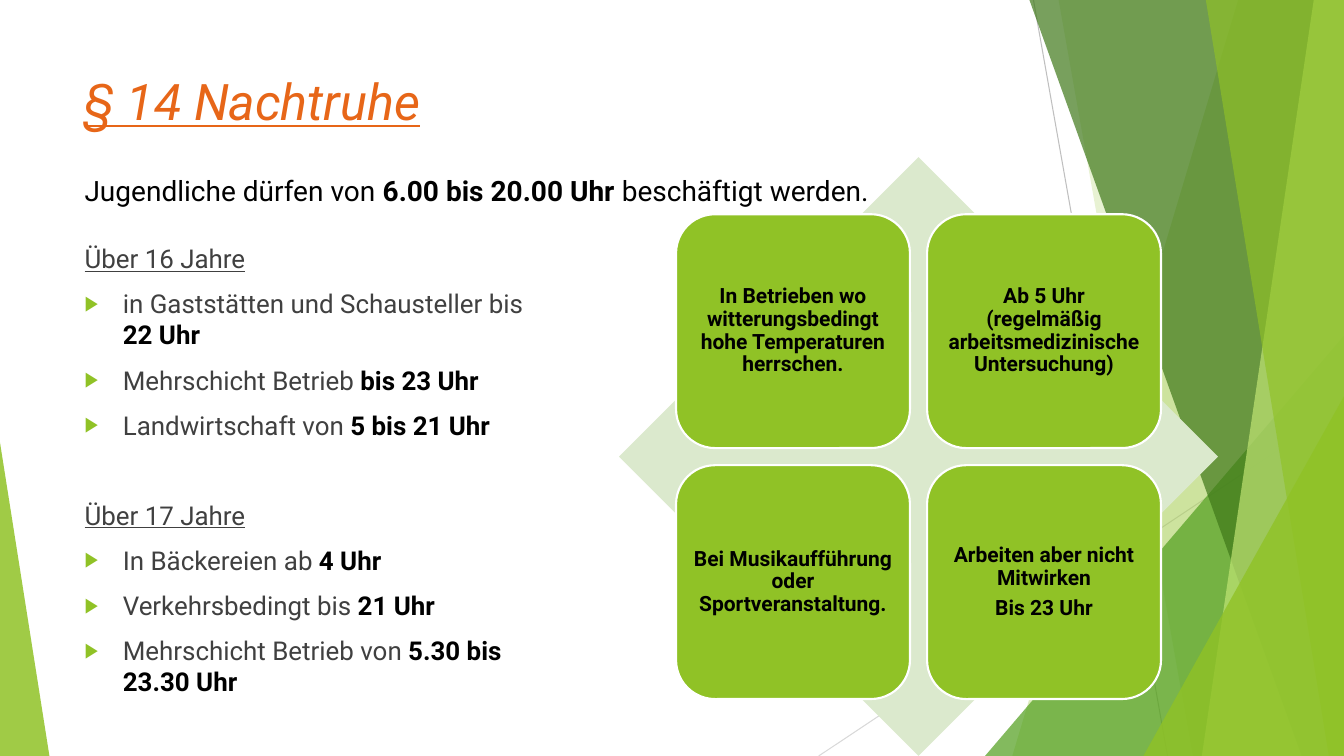
from lxml import etree
from pptx import Presentation
from pptx.dml.color import RGBColor
from pptx.enum.shapes import MSO_CONNECTOR, MSO_SHAPE
from pptx.enum.text import MSO_ANCHOR, PP_ALIGN
from pptx.oxml.ns import qn
from pptx.util import Inches, Pt

STRAIGHT = MSO_CONNECTOR.STRAIGHT
TRIANGLE, DIAMOND, TILE = MSO_SHAPE.RIGHT_TRIANGLE, MSO_SHAPE.DIAMOND, MSO_SHAPE.ROUNDED_RECTANGLE
PEAK = MSO_SHAPE.ISOSCELES_TRIANGLE
LEFT, CENTER = PP_ALIGN.LEFT, PP_ALIGN.CENTER
MIDDLE = MSO_ANCHOR.MIDDLE

WIDTH, HEIGHT = 13.33, 7.5
FONT = "Roboto"
GREEN, BLACK, GREY, WHITE = "90C226", "000000", "404040", "FFFFFF"

AGE_GROUPS = [
    ("Über 16 Jahre", [
        ("in Gaststätten und Schausteller bis ", "22 Uhr"),
        ("Mehrschicht Betrieb ", "bis 23 Uhr"),
        ("Landwirtschaft von ", "5 bis 21 Uhr"),
    ]),
    ("Über 17 Jahre", [
        ("In Bäckereien ab ", "4 Uhr"),
        ("Verkehrsbedingt bis ", "21 Uhr"),
        ("Mehrschicht Betrieb von ", "5.30 bis 23.30 Uhr"),
    ]),
]
EXCEPTIONS = [
    ["In Betrieben wo witterungsbedingt hohe Temperaturen herrschen."],
    ["Ab 5 Uhr\n(regelmäßig arbeitsmedizinische Untersuchung)"],
    ["Bei Musikaufführung oder Sportveranstaltung."],
    ["Arbeiten aber nicht Mitwirken", "Bis 23 Uhr"],
]


def rgb(color):
    return RGBColor.from_string(color)


def paint(shape, color, opacity=100, outline=None):
    shape.shadow.inherit = False
    shape.fill.solid()
    shape.fill.fore_color.rgb = rgb(color)
    if opacity < 100:
        fill_color = shape.fill._xPr.find(qn("a:solidFill"))[0]
        etree.SubElement(fill_color, qn("a:alpha"), val=str(opacity * 1000))
    if outline:
        shape.line.color.rgb = rgb(outline)
        shape.line.width = Pt(1.5)
    else:
        shape.line.fill.background()


def add_preset(slide, preset, box, color, **look):
    shape = slide.shapes.add_shape(preset, *map(Inches, box))
    paint(shape, color, **look)
    return shape


def add_frame(slide, box):
    frame = slide.shapes.add_textbox(*map(Inches, box)).text_frame
    frame.word_wrap = True
    return frame


def next_paragraph(frame):
    first = frame.paragraphs[0]
    return frame.add_paragraph() if first.runs else first


def write(paragraph, text, size, color=BLACK, bold=False, italic=False, underline=False):
    """Append text to a paragraph; a newline becomes a line break."""
    for index, line in enumerate(text.split("\n")):
        if index:
            paragraph.add_line_break()
        run = paragraph.add_run()
        run.text = line
        font = run.font
        font.name, font.size = FONT, Pt(size)
        font.bold, font.italic, font.underline = bold, italic, underline
        font.color.rgb = rgb(color)


def add_bullet(paragraph, indent):
    properties = paragraph._p.get_or_add_pPr()
    properties.set("marL", str(Inches(indent)))
    properties.set("indent", str(-Inches(indent)))
    bullet_color = etree.SubElement(properties, qn("a:buClr"))
    etree.SubElement(bullet_color, qn("a:srgbClr"), val=GREEN)
    etree.SubElement(properties, qn("a:buSzPct"), val="80000")
    etree.SubElement(properties, qn("a:buFont"), typeface="Arial")
    etree.SubElement(properties, qn("a:buChar"), char="▶")


def draw_hairline(slide, start, end, color):
    line = slide.shapes.add_connector(STRAIGHT, *map(Inches, start + end))
    line.line.color.rgb = rgb(color)
    line.line.width = Pt(0.75)
    etree.SubElement(line._element.spPr, qn("a:effectLst"))


def draw_facet(slide, top_x, bottom_x, color, opacity):
    """Fill from a slanted edge to the right side of the slide."""
    corners = [(top_x, 0), (WIDTH, 0), (WIDTH, HEIGHT), (bottom_x, HEIGHT)]
    points = [(Inches(x), Inches(y)) for x, y in corners]
    builder = slide.shapes.build_freeform(*points[0], scale=1.0)
    builder.add_line_segments(points[1:], close=True)
    paint(builder.convert_to_shape(), color, opacity)


def draw_corner(slide, left, top, color, opacity):
    """Triangle standing in the lower right corner of the slide."""
    box = (left, top, WIDTH - left, HEIGHT - top)
    add_preset(slide, PEAK, box, color, opacity=opacity).adjustments[0] = 1


def draw_backdrop(slide):
    draw_hairline(slide, (10.25, 0), (11.58, HEIGHT), "BFBFBF")
    draw_hairline(slide, (WIDTH, 4.03), (8.12, HEIGHT), "D9D9D9")
    draw_facet(slide, 12.28, 10.04, GREEN, 30)
    draw_facet(slide, 10.5, 11.83, GREEN, 20)
    draw_corner(slide, 9.77, 3.33, "54A021", 72)
    draw_facet(slide, 10.21, 12.91, "3F7819", 70)
    draw_facet(slide, 13.03, 11.92, "C0E474", 70)
    draw_facet(slide, 11.96, 13.18, GREEN, 65)
    draw_corner(slide, 11.34, 3.93, GREEN, 80)
    add_preset(slide, TRIANGLE, (0, 4.39, 0.49, 3.11), GREEN, opacity=85)


def draw_title(slide, box):
    title = add_frame(slide, box).paragraphs[0]
    write(title, "§ 14 Nachtruhe", 36, "E76618", italic=True, underline=True)


def draw_rule(slide, box):
    rule = add_frame(slide, box).paragraphs[0]
    write(rule, "Jugendliche dürfen von ", 20)
    write(rule, "6.00 bis 20.00 Uhr ", 20, bold=True)
    write(rule, "beschäftigt werden.", 20)


def draw_age_groups(slide, box):
    frame = add_frame(slide, box)
    for index, (age, limits) in enumerate(AGE_GROUPS):
        heading = next_paragraph(frame)
        heading.alignment = LEFT
        heading.space_before = Pt(42 if index else 0)
        write(heading, age, 18.5, GREY, underline=True)
        for activity, hours in limits:
            item = next_paragraph(frame)
            item.space_before = Pt(10)
            add_bullet(item, 0.38)
            write(item, activity, 18.5, GREY)
            write(item, hours, 18.5, bold=True)


def draw_exceptions(slide, box):
    """Four tiles in a two by two grid on a diamond."""
    left, top, side, _ = box
    add_preset(slide, DIAMOND, box, "DBE9CD")
    tile, pitch = 2.32, 2.49
    margin = (side - tile - pitch) / 2
    for index, lines in enumerate(EXCEPTIONS):
        row, column = divmod(index, 2)
        spot = (left + margin + column * pitch, top + margin + row * pitch, tile, tile)
        frame = add_preset(slide, TILE, spot, GREEN, outline=WHITE).text_frame
        frame.word_wrap = True
        frame.vertical_anchor = MIDDLE
        frame.margin_left = frame.margin_right = Inches(0.06)
        frame.margin_top = frame.margin_bottom = Inches(0.06)
        for line in lines:
            paragraph = next_paragraph(frame)
            paragraph.alignment = CENTER
            paragraph.line_spacing = 0.9
            paragraph.space_after = Pt(5.25)
            write(paragraph, line, 15, bold=True)


def main():
    deck = Presentation()
    deck.slide_width, deck.slide_height = Inches(WIDTH), Inches(HEIGHT)
    slide = deck.slides.add_slide(deck.slide_layouts[6])
    draw_backdrop(slide)
    draw_age_groups(slide, (0.74, 2.36, 4.58, 4.24))
    draw_exceptions(slide, (6.14, 1.56, 5.94, 5.94))
    draw_rule(slide, (0.74, 1.67, 9.4, 0.44))
    draw_title(slide, (0.74, 0.65, 4.3, 0.71))
    deck.save("out.pptx")


if __name__ == "__main__":
    main()
